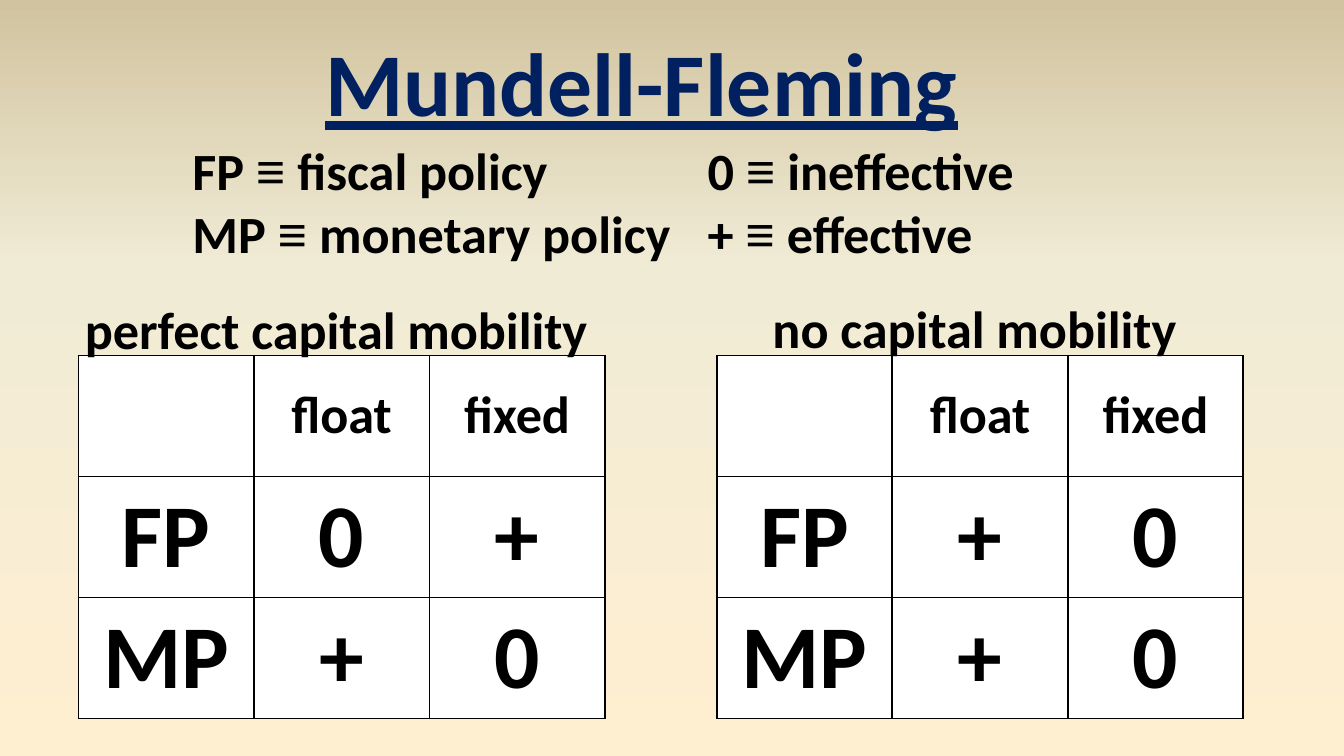
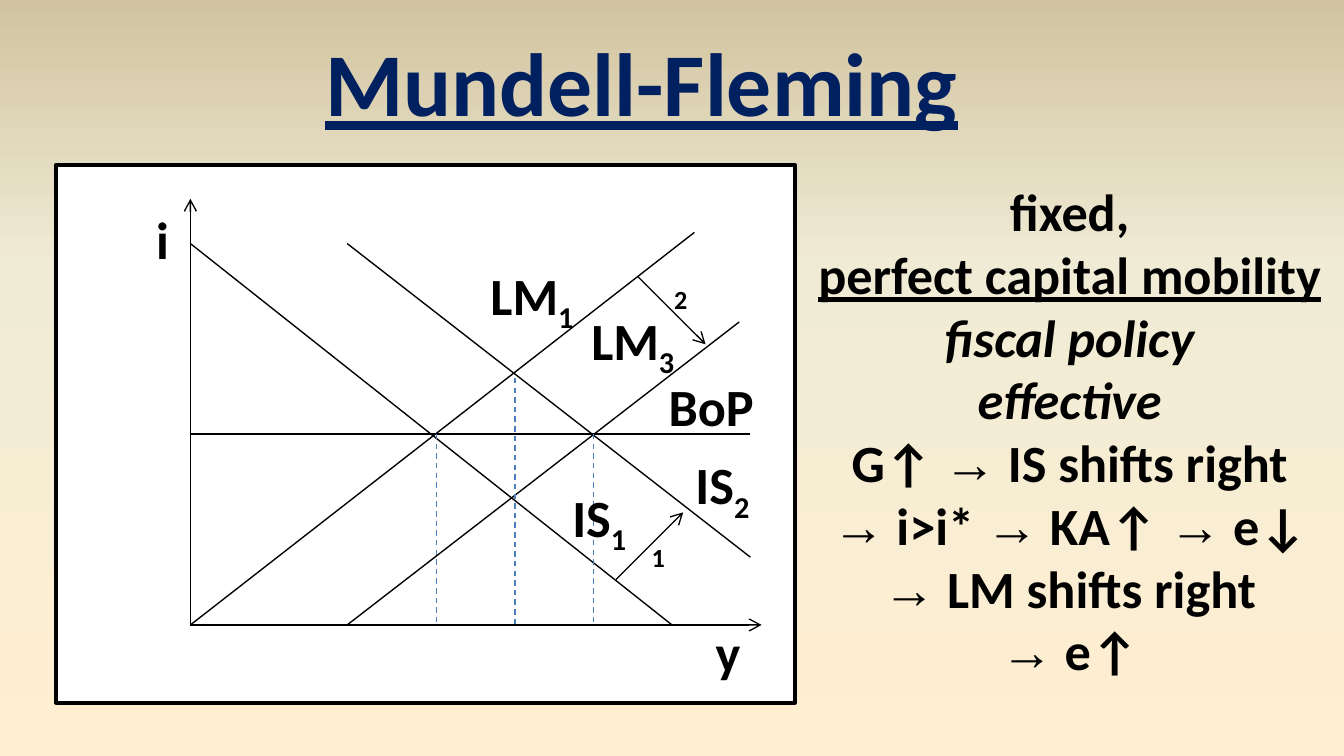
import copy
import itertools
import lxml.etree
import pptx
import pptx.dml.color
import pptx.enum.dml
import pptx.enum.shapes
import pptx.enum.text
import pptx.oxml.ns
import pptx.util

Pt = pptx.util.Pt
RGB = pptx.dml.color.RGBColor
ALIGN = pptx.enum.text.PP_ALIGN
qn = pptx.oxml.ns.qn

# Shared style
BLACK = RGB(0x00, 0x00, 0x00)
WHITE = RGB(0xFF, 0xFF, 0xFF)
NAVY = RGB(0x00, 0x20, 0x60)
BLUE = RGB(0x4B, 0x7E, 0xBC)
STOPS = [(0, RGB(0xFF, 0xEF, 0xD1)), (0.65, RGB(0xF0, 0xEB, 0xD5)),
         (1, RGB(0xD1, 0xC3, 0x9F))]
FONT, SYMBOL = "Calibri", "Times New Roman"
BIG, BODY, SMALL = 48, 28, 14
TITLE = "Mundell-Fleming"

# Slide 1: legends (box, lines), captions (box, text) and tables (left, rows)
LEGENDS = [
    ((96, 70.5, 294, 75), ["FP ≡ fiscal policy", "MP ≡ monetary policy"]),
    ((372, 70.5, 288, 75), ["0 ≡ ineffective", "+ ≡ effective"]),
]
CAPTIONS = [
    ((36, 155.5, 288, 41), "perfect capital mobility"),
    ((396, 155, 252, 41), "no capital mobility"),
]
TABLES = [
    (42, [["", "float", "fixed"], ["FP", "0", "+"], ["MP", "+", "0"]]),
    (384, [["", "float", "fixed"], ["FP", "+", "0"], ["MP", "+", "0"]]),
]
TOP, COL, ROW = 190.5, 94, 64.8

# Slide 2: the argument, with a style for each paragraph
STORY = [
    ("fixed,", ""), ("perfect capital mobility", "u"),
    ("fiscal policy", "i"), ("effective", "i"),
    ("G↑ → IS shifts right", ""),
    ("→ i>i* → KA↑ → e↓ → LM shifts right", ""), ("→ e↑", ""),
]

# Slide 2: the graph, with points as (x, y)
PANEL = (30, 88.5, 396, 288)
LEFT, BASE, RATE = 102, 334.8, 232.5
CURVES = [
    ((372, 124.5), (LEFT, BASE)),     # LM1
    ((LEFT, 130.5), (360, BASE)),     # IS1
    ((186, 130.5), (402, 298.5)),     # IS2
    ((396, 172.5), (186, BASE)),      # LM3
    ((402, RATE), (LEFT, RATE)),      # BoP
]
ARROWS = [
    ((LEFT, BASE), (LEFT, 106.5)), ((LEFT, BASE), (408, BASE)),
    ((330, 310.5), (366, 274.5)), ((342, 148.5), (378, 184.5)),
]
DROPS = [(234, RATE), (318, RATE), (276, 202.5)]
LABELS = [
    ("IS_1", 294, 256.5, 54), ("i", 60, 107.5, 54), ("y", 366, 329, 48),
    ("IS_2", 360, 239, 54), ("BoP", 348, 197, 66),
    ("LM_1", 252, 137.5, 66), ("LM_3", 306, 161.5, 66),
]
STEPS = [("2", 354, 148.5), ("1", 342, 286.5)]


def write(para, text, size, color=BLACK, style="", align=ALIGN.CENTER):
    """Fill a paragraph; a part after _ is lowered, ≡ and → change font."""
    para.alignment = align
    main, _, low = text.partition("_")
    parts = [("".join(g), sym, False)
             for sym, g in itertools.groupby(main, lambda c: c in "≡→")]
    if low:
        parts.append((low, False, True))
    for part, sym, sub in parts:
        run = para.add_run()
        run.text = part
        font = run.font
        font.name = SYMBOL if sym else FONT
        font.size = Pt(size)
        font.bold = True
        font.color.rgb = color
        if "u" in style:
            font.underline = True
        if "i" in style:
            font.italic = True
        if sub:
            font._element.set("baseline", "-25000")


def label(shapes, box, lines, size=BODY, wrap=True, **look):
    """Add a text box; lines are (text, style) pairs."""
    frame = shapes.add_textbox(*map(Pt, box)).text_frame
    frame.word_wrap = wrap
    frame.auto_size = pptx.enum.text.MSO_AUTO_SIZE.SHAPE_TO_FIT_TEXT
    for n, (text, style) in enumerate(lines):
        para = frame.add_paragraph() if n else frame.paragraphs[0]
        write(para, text, size, style=style, **look)


def line(shapes, start, end, color=BLACK, dash=False, arrow=False):
    link = shapes.add_connector(pptx.enum.shapes.MSO_CONNECTOR.STRAIGHT,
                                *map(Pt, start + end))
    link.line.color.rgb = color
    link.line.width = Pt(0.75)
    if dash:
        link.line.dash_style = pptx.enum.dml.MSO_LINE.DASH
    props = link._element.spPr
    if arrow:
        lxml.etree.SubElement(props.find(qn("a:ln")), qn("a:tailEnd"),
                              type="arrow")
    lxml.etree.SubElement(props, qn("a:effectLst"))


def border(cell):
    props = cell._tc.get_or_add_tcPr()
    for n, side in enumerate(("a:lnL", "a:lnR", "a:lnT", "a:lnB")):
        edge = lxml.etree.Element(qn(side), w=str(Pt(1)))
        fill = lxml.etree.SubElement(edge, qn("a:solidFill"))
        lxml.etree.SubElement(fill, qn("a:srgbClr"), val=str(BLACK))
        props.insert(n, edge)


def grid(shapes, left, rows):
    high, wide = len(rows), len(rows[0])
    table = shapes.add_table(high, wide, Pt(left), Pt(TOP),
                             Pt(COL * wide), Pt(ROW * high)).table
    table.first_row = table.horz_banding = False
    for r, row in enumerate(rows):
        table.rows[r].height = Pt(ROW)
        for c, text in enumerate(row):
            table.columns[c].width = Pt(COL)
            cell = table.cell(r, c)
            cell.fill.solid()
            cell.fill.fore_color.rgb = WHITE
            cell.margin_top = cell.margin_bottom = Pt(3)
            cell.vertical_anchor = pptx.enum.text.MSO_ANCHOR.MIDDLE
            write(cell.text_frame.paragraphs[0], text, BIG if r else BODY)
            border(cell)


def start(deck):
    """Add a slide with the shared background and title."""
    slide = deck.slides.add_slide(deck.slide_layouts[6])
    fill = slide.background.fill
    fill.gradient()
    fill.gradient_angle = 90
    stops = slide._element.find(".//" + qn("a:gsLst"))
    stops.append(copy.deepcopy(stops[0]))
    for stop, (place, color) in zip(fill.gradient_stops, STOPS):
        stop.position = place
        stop.color.rgb = color
    label(slide.shapes, (165.5, 10.8, 356.5, 65.5), [(TITLE, "u")], BIG,
          wrap=False, color=NAVY)
    return slide


def matrix(deck):
    shapes = start(deck).shapes
    for left, rows in TABLES:
        grid(shapes, left, rows)
    for box, text in CAPTIONS:
        label(shapes, box, [(text, "")])
    for box, lines in LEGENDS:
        label(shapes, box, [(text, "") for text in lines], align=ALIGN.LEFT)


def graph(deck):
    slide = start(deck)
    label(slide.shapes, (426, 92.5, 294, 278.5), STORY)
    shapes = slide.shapes.add_group_shape().shapes

    # Panel
    panel = shapes.add_shape(pptx.enum.shapes.MSO_SHAPE.RECTANGLE,
                             *map(Pt, PANEL))
    panel.shadow.inherit = False
    panel.fill.solid()
    panel.fill.fore_color.rgb = WHITE
    panel.line.color.rgb = BLACK
    panel.line.width = Pt(2)

    # Lines
    line(shapes, (234, RATE), (LEFT, RATE), BLUE, dash=True)
    for ends in CURVES:
        line(shapes, *ends)
    for ends in ARROWS:
        line(shapes, *ends, arrow=True)
    for x, y in DROPS:
        line(shapes, (x, y), (x, BASE), BLUE, dash=True)

    # Names
    for text, x, y, width in LABELS:
        label(shapes, (x, y, width, 41), [(text, "")])
    for text, x, y in STEPS:
        label(shapes, (x, y, 18, 24.5), [(text, "")], SMALL)


def main():
    deck = pptx.Presentation()
    deck.slide_width, deck.slide_height = Pt(720), Pt(405)
    matrix(deck)
    graph(deck)
    deck.save("out.pptx")


if __name__ == "__main__":
    main()
